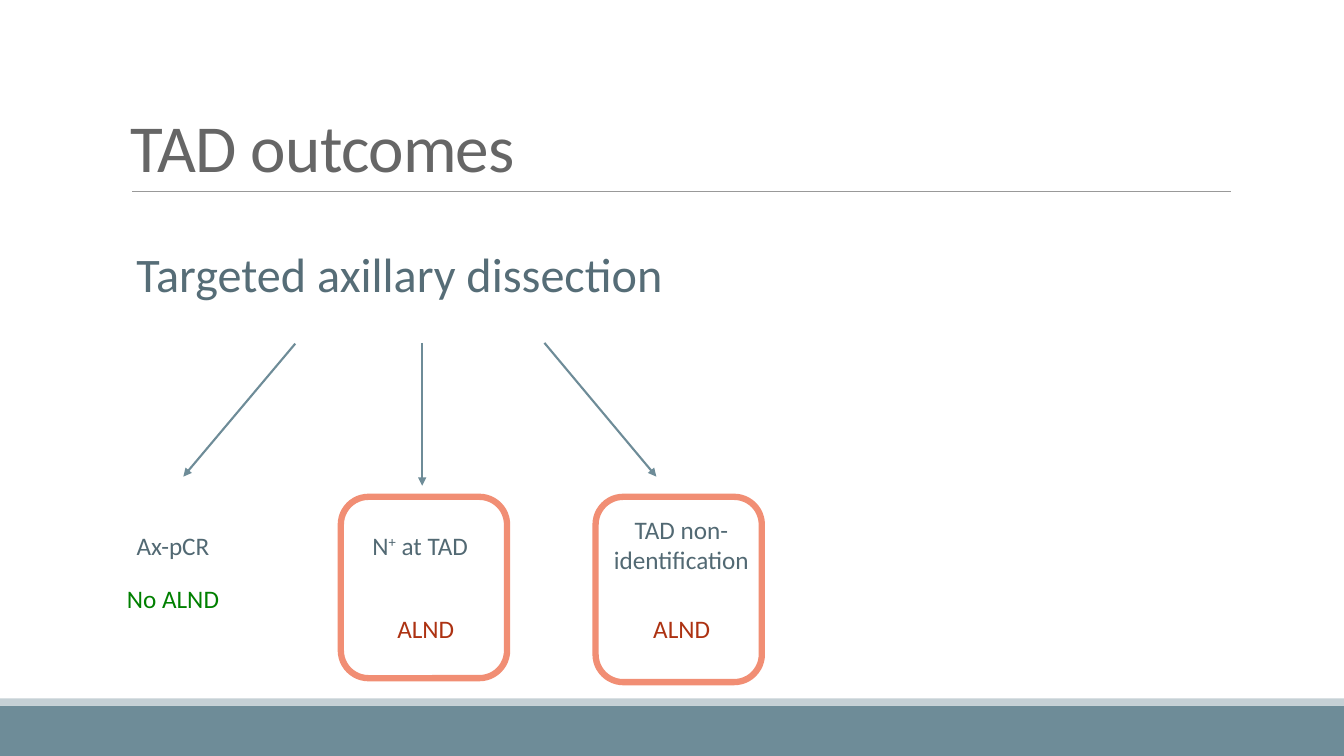
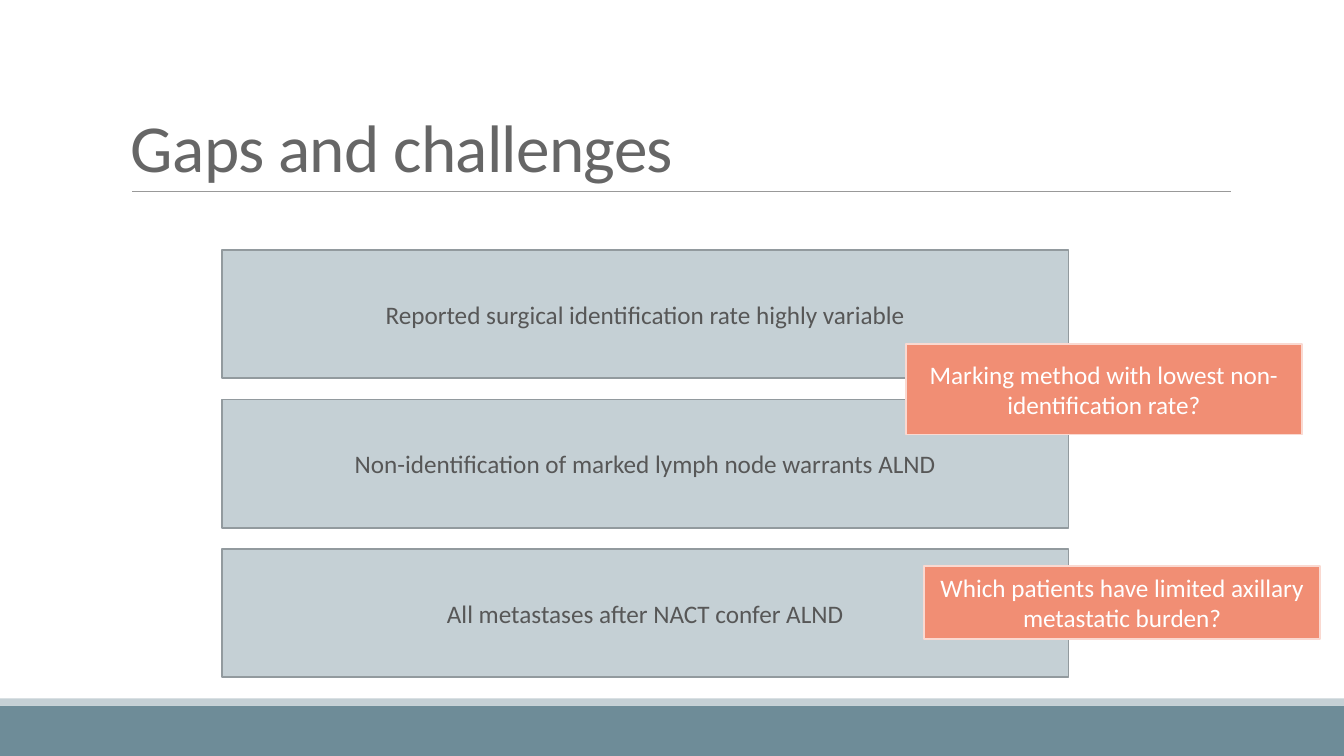
from dataclasses import dataclass

from lxml import etree
from pptx import Presentation
from pptx import util as u
from pptx.dml.color import RGBColor
from pptx.enum import shapes, text
from pptx.oxml import ns


@dataclass(frozen=True)
class Theme:
    font: str = "Calibri"
    head: str = "666666"
    lead: str = "566D77"
    body: str = "526973"
    dark: str = "575757"
    white: str = "FFFFFF"
    good: str = "008000"
    bad: str = "AD3212"
    slate: str = "6E8C98"
    pale: str = "C5D0D5"
    edge: str = "929A9E"
    rule: str = "999999"
    coral: str = "F18E74"
    blush: str = "FAD9D1"
    big: float = 48
    mid: float = 34.4
    small: float = 18


class Deck:
    def __init__(self, theme):
        self.theme = theme
        self.prs = Presentation()
        self.prs.slide_width = u.Cm(33.87)
        self.prs.slide_height = u.Cm(19.05)
        self.slide = None

    def page(self, title):
        t = self.theme
        self.slide = self.prs.slides.add_slide(self.prs.slide_layouts[6])
        self.box((0, 17.78, 33.87, 1.27), t.slate)
        self.box((0, 17.6, 33.87, 0.18), t.pale)
        self.line((3.33, 4.83), (31.01, 4.83), t.rule, 0.5)
        frame = self.label((3.05, 0.79, 27.94, 4.04), [title], t.head, t.big,
                           text.PP_ALIGN.LEFT)
        frame.vertical_anchor = text.MSO_ANCHOR.BOTTOM
        para = frame.paragraphs[0]
        para.line_spacing = 0.85
        para.runs[0]._r.get_or_add_rPr().set("spc", "-50")

    def words(self, frame, parts, color, size, align=text.PP_ALIGN.CENTER):
        frame.word_wrap = True
        para = frame.paragraphs[0]
        para.alignment = align
        for part in parts:
            run = para.add_run()
            run.text = part
            run.font.name = self.theme.font
            run.font.size = u.Pt(size)
            run.font.color.rgb = RGBColor.from_string(color)
        return frame

    def label(self, area, parts, color, size, align=text.PP_ALIGN.CENTER):
        item = self.slide.shapes.add_textbox(*map(u.Cm, area))
        return self.words(item.text_frame, parts, color, size, align)

    def lead(self, area, words):
        frame = self.label(area, [words], self.theme.lead, self.theme.mid)
        frame.margin_left = frame.margin_right = 0
        para = frame.paragraphs[0]
        para.line_spacing = 0.7
        para.space_before = u.Pt(12)
        para.space_after = u.Pt(2)

    def note(self, area, parts, color):
        return self.label(area, parts, color, self.theme.small)

    def box(self, area, fill=None, edge=None, width=1.25,
            kind=shapes.MSO_SHAPE.RECTANGLE):
        item = self.slide.shapes.add_shape(kind, *map(u.Cm, area))
        item.shadow.inherit = False
        if fill:
            item.fill.solid()
            item.fill.fore_color.rgb = RGBColor.from_string(fill)
        else:
            item.fill.background()
        if edge:
            item.line.color.rgb = RGBColor.from_string(edge)
            item.line.width = u.Pt(width)
        else:
            item.line.fill.background()
        return item

    def ring(self, area):
        self.box(area, None, self.theme.coral, 4.5,
                 shapes.MSO_SHAPE.ROUNDED_RECTANGLE)

    def panel(self, area, words, fill, edge, color):
        frame = self.box(area, fill, edge).text_frame
        frame.vertical_anchor = text.MSO_ANCHOR.MIDDLE
        self.words(frame, [words], color, self.theme.small)

    def line(self, start, end, color, width, arrow=False):
        item = self.slide.shapes.add_connector(
            shapes.MSO_CONNECTOR.STRAIGHT, *map(u.Cm, start + end))
        item.line.color.rgb = RGBColor.from_string(color)
        item.line.width = u.Pt(width)
        props = item._element.spPr
        if arrow:
            tail = etree.SubElement(props.find(ns.qn("a:ln")),
                                    ns.qn("a:tailEnd"))
            tail.set("type", "triangle")
        etree.SubElement(props, ns.qn("a:effectLst"))


def outcomes(deck):
    t = deck.theme
    deck.page("TAD outcomes")
    deck.lead((2.69, 6.43, 14.76, 1.4), "Targeted axillary dissection")
    for start, end in [
        ((7.44, 8.66), (4.62, 12.01)),
        ((13.72, 8.64), (16.54, 12.01)),
        ((10.64, 8.64), (10.64, 12.24)),
    ]:
        deck.line(start, end, t.slate, 1.5, True)

    deck.note((1.07, 13.23, 6.58, 1.02), ["Ax-pCR"], t.body)
    node = deck.note((7.77, 13.23, 5.64, 1.02), ["N", "+", " at TAD"], t.body)
    node.paragraphs[0].runs[1]._r.get_or_add_rPr().set("baseline", "30000")
    deck.note((14.35, 12.83, 5.64, 1.8), ["TAD non-identification"], t.body)

    for left, top, words, color in [
        (1.07, 14.58, "No ALND", t.good),
        (7.44, 15.34, "ALND", t.bad),
        (13.89, 15.34, "ALND", t.bad),
    ]:
        deck.note((left, top, 6.58, 1.02), [words], color)
    for left, high in [(8.59, 4.57), (15.01, 4.67)]:
        deck.ring((left, 12.52, 4.19, high))


def gaps(deck):
    t = deck.theme
    deck.page("Gaps and challenges")
    for row, words in enumerate([
        "Reported surgical identification rate highly variable",
        "Non-identification of marked lymph node warrants ALND",
        "All metastases after NACT confer ALND",
    ]):
        deck.panel((5.59, 6.3 + 3.77 * row, 21.34, 3.23), words,
                   t.pale, t.edge, t.dark)
    for left, top, high, words in [
        (22.83, 8.66, 2.29,
         "Marking method with lowest non-identification rate?"),
        (23.29, 14.27, 1.83,
         "Which patients have limited axillary metastatic burden?"),
    ]:
        deck.panel((left, top, 9.98, high), words, t.coral, t.blush, t.white)


def main():
    deck = Deck(Theme())
    outcomes(deck)
    gaps(deck)
    deck.prs.save("out.pptx")


if __name__ == "__main__":
    main()
